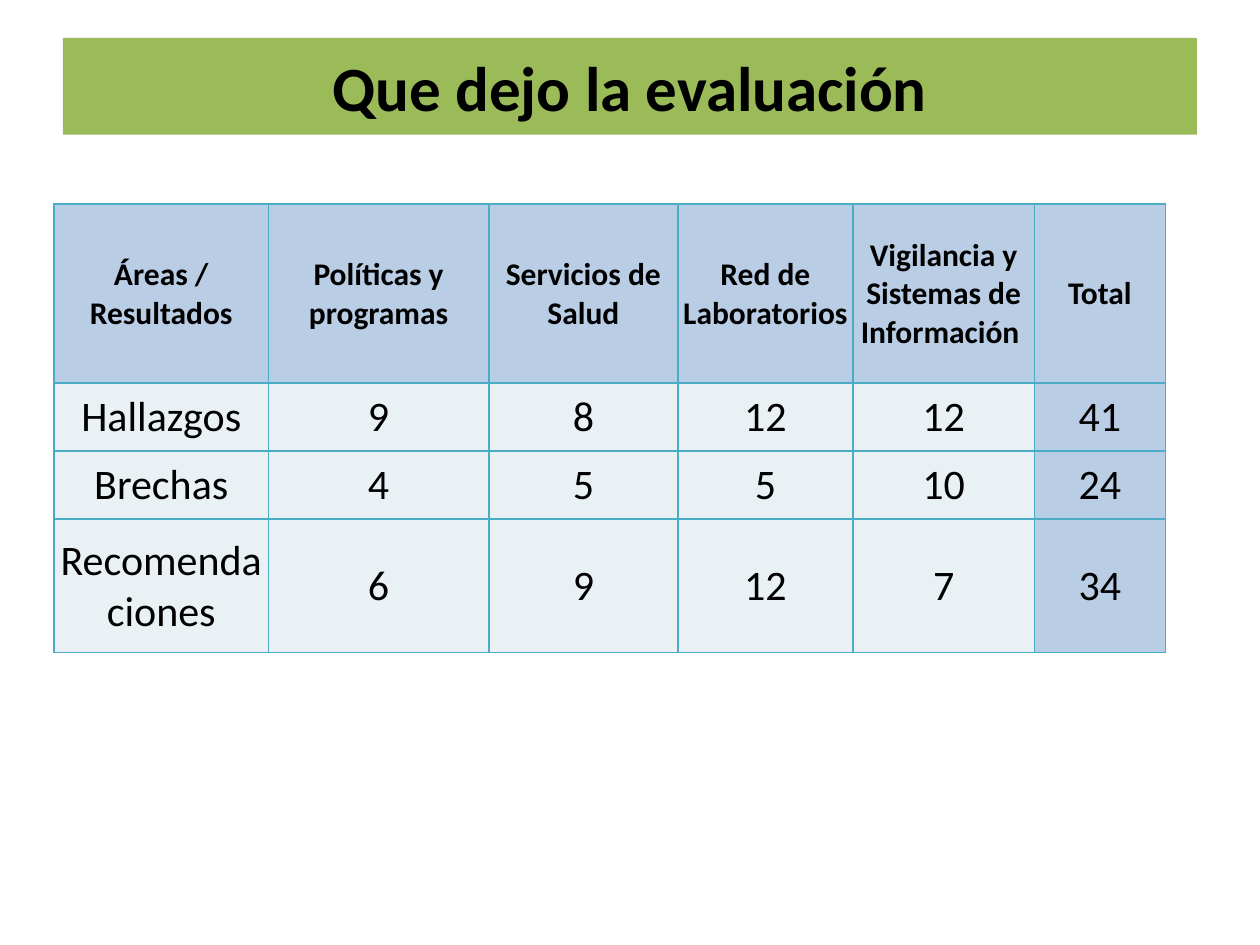
from lxml import etree
from pptx import Presentation
from pptx.dml.color import RGBColor
from pptx.enum import shapes, text
from pptx.oxml import ns
from pptx.util import Inches, Pt

GREEN = RGBColor(0x9B, 0xBB, 0x59)
BLUE = RGBColor(0xB9, 0xCD, 0xE5)
PALE = RGBColor(0xE9, 0xF1, 0xF5)
TEAL = RGBColor(0x4B, 0xAC, 0xC6)
BLACK = RGBColor(0, 0, 0)


def write(frame, words, size, bold):
    frame.word_wrap = True
    frame.vertical_anchor = text.MSO_ANCHOR.MIDDLE
    para = frame.paragraphs[0]
    para.text = words
    para.alignment = text.PP_ALIGN.CENTER
    para.font.name = "Calibri"
    para.font.size = Pt(size)
    para.font.bold = bold
    para.font.color.rgb = BLACK


def add_borders(cell):
    properties = cell._tc.get_or_add_tcPr()
    for position, side in enumerate(("lnL", "lnR", "lnT", "lnB")):
        line = etree.Element(ns.qn("a:" + side), w=str(Pt(1)))
        fill = etree.SubElement(line, ns.qn("a:solidFill"))
        etree.SubElement(fill, ns.qn("a:srgbClr"), val=str(TEAL))
        properties.insert(position, line)


deck = Presentation()
deck.slide_width = Inches(10)
deck.slide_height = Inches(7.5)
page = deck.slides.add_slide(deck.slide_layouts[6])

title = page.shapes.add_shape(
    shapes.MSO_SHAPE.RECTANGLE, Inches(0.5), Inches(0.3), Inches(9), Inches(0.77)
)
title.shadow.inherit = False
title.fill.solid()
title.fill.fore_color.rgb = GREEN
title.line.fill.background()
write(title.text_frame, "Que dejo la evaluación", 36, True)

rows = [
    ["Áreas / Resultados", "Políticas y programas", "Servicios de Salud",
     "Red de Laboratorios", "Vigilancia y Sistemas de Información ", "Total"],
    ["Hallazgos", "9", "8", "12", "12", "41"],
    ["Brechas", "4", "5", "5", "10", "24"],
    ["Recomendaciones", "6", "9", "12", "7", "34"],
]
widths = [1.7, 1.75, 1.5, 1.39, 1.44, 1.04]
heights = [1.42, 0.54, 0.54, 1.06]

table = page.shapes.add_table(
    len(rows), len(widths), Inches(0.43), Inches(1.62),
    Inches(sum(widths)), Inches(sum(heights))
).table
table.horz_banding = False
for column, width in zip(table.columns, widths):
    column.width = Inches(width)
for row, height in zip(table.rows, heights):
    row.height = Inches(height)

for row_index, row in enumerate(rows):
    for column_index, words in enumerate(row):
        cell = table.cell(row_index, column_index)
        header = row_index == 0
        total = column_index == len(row) - 1
        cell.margin_left = cell.margin_right = cell.margin_top = Inches(0.01)
        cell.margin_bottom = 0
        cell.vertical_anchor = text.MSO_ANCHOR.MIDDLE
        cell.fill.solid()
        cell.fill.fore_color.rgb = BLUE if header or total else PALE
        add_borders(cell)
        write(cell.text_frame, words, 18 if header else 24, header)

deck.save("out.pptx")
